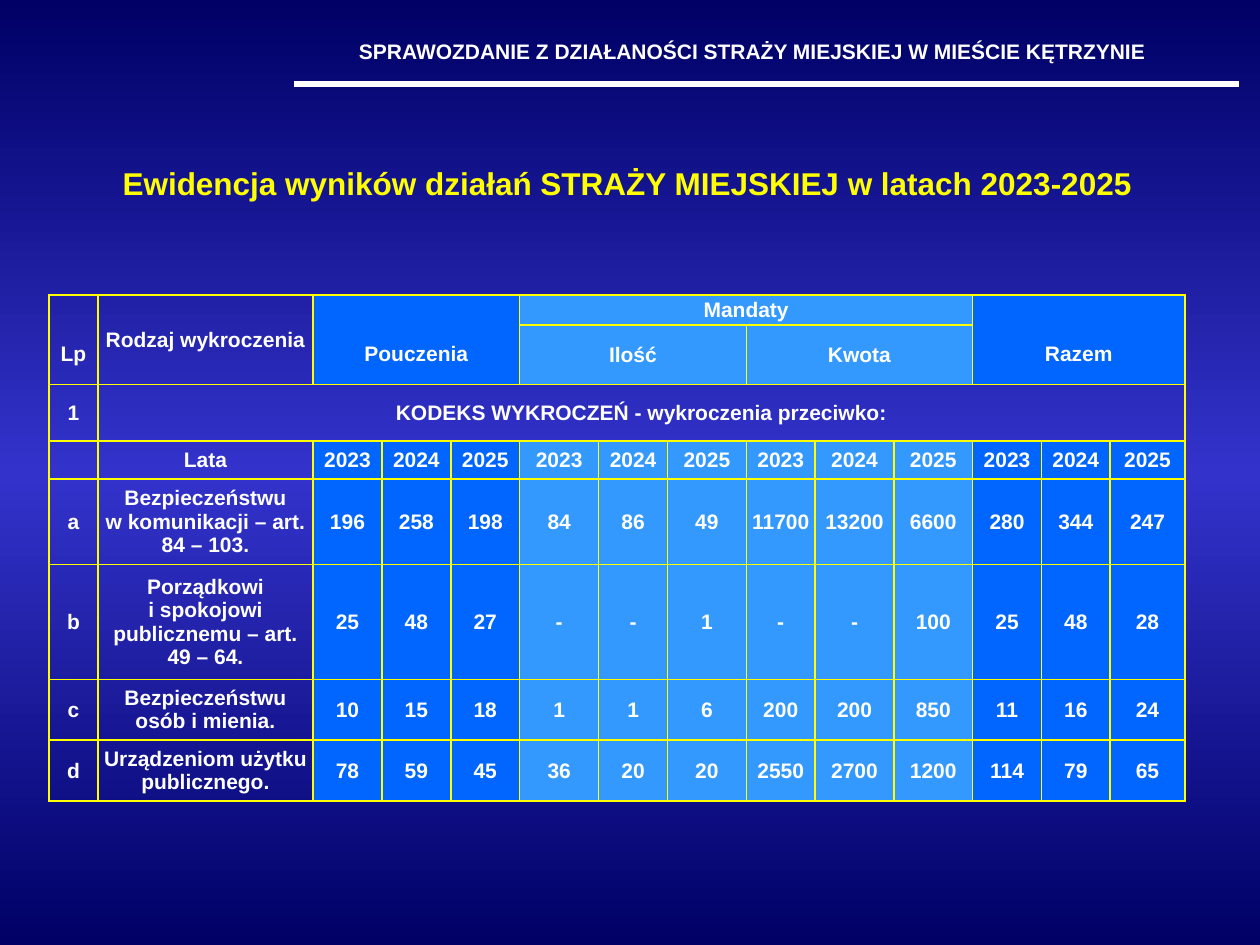
"""Build the slide with the municipal guard's results for 2023-2025."""
from copy import deepcopy

from lxml.etree import SubElement
from pptx import Presentation
from pptx.dml.color import RGBColor
from pptx.enum.shapes import MSO_CONNECTOR
from pptx.enum.text import MSO_ANCHOR, MSO_AUTO_SIZE, PP_ALIGN
from pptx.oxml import parse_xml
from pptx.oxml.ns import nsdecls, qn
from pptx.util import Pt

WHITE, YELLOW, DARK_BLUE, LIGHT_BLUE = "FFFFFF", "FFFF00", "0066FF", "3399FF"


def color(value):
    """Turn a hex string into a colour."""
    return RGBColor.from_string(value)


def write(frame, text, size=12, ink=WHITE):
    """Write centred bold text, with a line break at each newline."""
    frame.word_wrap = True
    frame.vertical_anchor = MSO_ANCHOR.MIDDLE
    paragraph = frame.paragraphs[0]
    paragraph.alignment = PP_ALIGN.CENTER
    paragraph.font.size = Pt(size)
    for number, line in enumerate(text.split("\n")):
        if number:
            paragraph.add_line_break()
        span = paragraph.add_run()
        span.text = line
        span.font.name = "Arial"
        span.font.size = Pt(size)
        span.font.bold = True
        span.font.color.rgb = color(ink)


deck = Presentation()
deck.slide_width, deck.slide_height = Pt(720), Pt(540)
page = deck.slides.add_slide(deck.slide_layouts[5])

background = page.background.fill
background.gradient()
background.gradient_angle = 90
stop_list = page.element.find(".//" + qn("a:gsLst"))
stop_list.insert(1, deepcopy(stop_list[0]))
for stop, place, shade in zip(background.gradient_stops, (0, 0.5, 1), ("000066", "3333CC", "000066")):
    stop.position = place
    stop.color.rgb = color(shade)

rule = page.shapes.add_connector(MSO_CONNECTOR.STRAIGHT, Pt(168), Pt(48), Pt(708), Pt(48))
rule.line.color.rgb = color(WHITE)
rule.line.width = Pt(3)
SubElement(rule.element.spPr, qn("a:effectLst"))

widths = [28, 122.9, 39.4, 39.4, 39.4, 45.1, 39.4, 45, 39.4, 45, 45, 39.4, 39.2, 42.8]
heights = [17.2, 34.2, 32.2, 21.6, 49, 65.6, 34.8, 34.8]
years = ["2023", "2024", "2025"]
rows = [
    ["Lp", "Rodzaj wykroczenia", "Pouczenia", "", "", "Mandaty", "", "", "", "", "", "Razem", "", ""],
    ["", "", "", "", "", "Ilość", "", "", "Kwota", "", "", "", "", ""],
    ["1", "KODEKS WYKROCZEŃ - wykroczenia przeciwko:"] + [""] * 12,
    ["", "Lata"] + years * 4,
    ["a", "Bezpieczeństwu\nw komunikacji – art. 84 – 103.",
     "196", "258", "198", "84", "86", "49", "11700", "13200", "6600", "280", "344", "247"],
    ["b", "Porządkowi\ni spokojowi publicznemu – art. 49 – 64.",
     "25", "48", "27", "-", "-", "1", "-", "-", "100", "25", "48", "28"],
    ["c", "Bezpieczeństwu osób i mienia.",
     "10", "15", "18", "1", "1", "6", "200", "200", "850", "11", "16", "24"],
    ["d", "Urządzeniom użytku publicznego.",
     "78", "59", "45", "36", "20", "20", "2550", "2700", "1200", "114", "79", "65"],
]
fills = [None] * 2 + [DARK_BLUE] * 3 + [LIGHT_BLUE] * 6 + [DARK_BLUE] * 3
merges = [(0, 0, 1, 0), (0, 1, 1, 1), (0, 2, 1, 4), (0, 5, 0, 10), (0, 11, 1, 13),
          (1, 5, 1, 7), (1, 8, 1, 10), (2, 1, 2, 13)]
lowered = ("Lp", "Pouczenia", "Razem")

table = page.shapes.add_table(len(rows), len(widths), Pt(28), Pt(168.5),
                              Pt(sum(widths)), Pt(sum(heights))).table
table.first_row = table.horz_banding = False
for column, width in zip(table.columns, widths):
    column.width = Pt(width)
for row, height in zip(table.rows, heights):
    row.height = Pt(height)
for top, left, bottom, right in merges:
    table.cell(top, left).merge(table.cell(bottom, right))

for row_number, row in enumerate(rows):
    for column_number, text in enumerate(row):
        cell = table.cell(row_number, column_number)
        inset = Pt(1.4 if row_number < 2 else 2.9)
        cell.margin_left = cell.margin_right = cell.margin_top = cell.margin_bottom = inset
        if text in lowered:
            cell.margin_top = Pt(18)
        cell.vertical_anchor = MSO_ANCHOR.MIDDLE
        properties = cell._tc.get_or_add_tcPr()
        for side in ("lnL", "lnR", "lnT", "lnB"):
            properties.append(parse_xml(
                f'<a:{side} {nsdecls("a")} w="{Pt(1)}"><a:solidFill>'
                f'<a:srgbClr val="{YELLOW}"/></a:solidFill></a:{side}>'))
        if fills[column_number] and row_number != 2:
            cell.fill.solid()
            cell.fill.fore_color.rgb = color(fills[column_number])
        else:
            cell.fill.background()
        if text:
            write(cell.text_frame, text)
        else:
            cell.text_frame.paragraphs[0].font.size = Pt(12)

title = page.shapes.title
title.left, title.top, title.width, title.height = Pt(-1.5), Pt(90), Pt(720), Pt(29)
title.text_frame.auto_size = MSO_AUTO_SIZE.NONE
write(title.text_frame, "Ewidencja wyników działań STRAŻY MIEJSKIEJ w latach 2023-2025", 18, YELLOW)

header = page.shapes.add_textbox(Pt(154), Pt(18), Pt(552), Pt(22))
write(header.text_frame, "SPRAWOZDANIE Z DZIAŁANOŚCI STRAŻY MIEJSKIEJ W MIEŚCIE KĘTRZYNIE")

deck.save("out.pptx")
